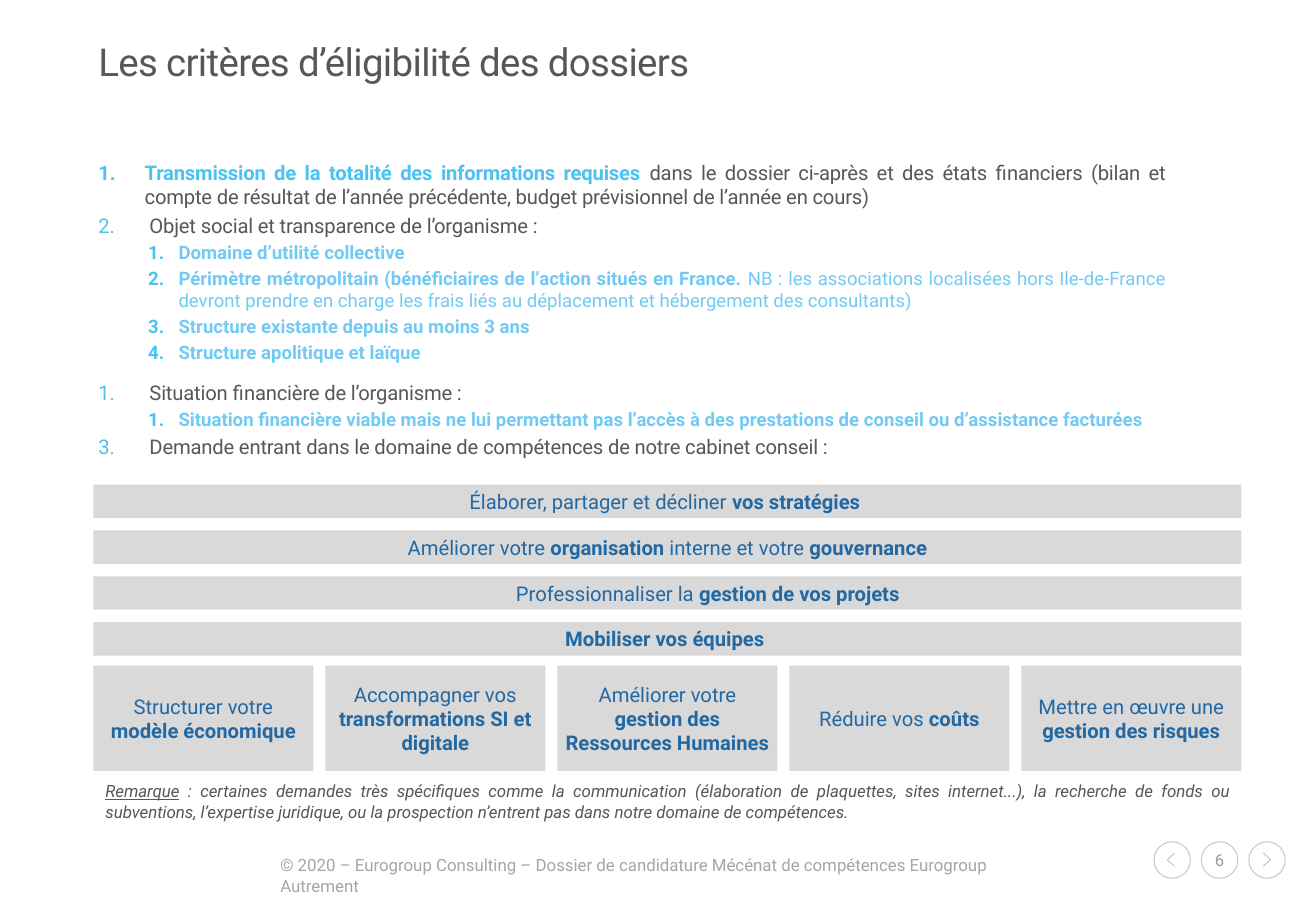
"""Builds the slide on the eligibility criteria for applications."""
from lxml.etree import SubElement
from pptx import Presentation
from pptx.dml.color import RGBColor
from pptx.enum.shapes import MSO_SHAPE
from pptx.enum.text import MSO_ANCHOR, PP_ALIGN
from pptx.oxml.ns import qn
from pptx.util import Pt

GREY, BLUE, SKY, NAVY = "57565A", "4CC2F1", "71CAF3", "2268A3"
PANEL, OUTLINE, FOOTER, NUMBER = "D9D9D9", "BFBFBF", "A6A6A6", "9A9A9B"


def paint(fill, colour):
    fill.solid()
    fill.fore_color.rgb = RGBColor.from_string(colour)


def write(paragraph, text, size, colour, spacing=0, **formats):
    run = paragraph.add_run()
    run.text = text
    for name, value in {"name": "Roboto", "size": Pt(size), **formats}.items():
        setattr(run.font, name, value)
    paint(run.font.fill, colour)
    if spacing:
        run.font._element.set("spc", str(spacing))


presentation = Presentation()
presentation.slide_width, presentation.slide_height = Pt(780), Pt(540)
slide = presentation.slides.add_slide(presentation.slide_layouts[6])
shapes = slide.shapes

text_boxes = {
    "footer": (159.1, 503.3, 465.8, 19.4, 7.2, 3.6, MSO_ANCHOR.TOP),
    "title": (58.3, 25.2, 663, 26.6, 0, 0, MSO_ANCHOR.MIDDLE),
    "criteria": (58.3, 95, 632.9, 200, 0, 0, MSO_ANCHOR.TOP),
    "remark": (55.4, 459.4, 680.4, 34.6, 7.2, 3.6, MSO_ANCHOR.TOP),
}
frames = {}
for name, (left, top, width, height, side, edge, anchor) in text_boxes.items():
    frame = shapes.add_textbox(Pt(left), Pt(top), Pt(width), Pt(height)).text_frame
    settings = {
        "word_wrap": True, "vertical_anchor": anchor,
        "margin_left": Pt(side), "margin_right": Pt(side),
        "margin_top": Pt(edge), "margin_bottom": Pt(edge),
    }
    for key, value in settings.items():
        setattr(frame, key, value)
    frames[name] = frame

write(frames["footer"].paragraphs[0],
      "© 2020 – Eurogroup Consulting – Dossier de candidature Mécénat de compétences Eurogroup Autrement",
      10, FOOTER)

title = frames["title"].paragraphs[0]
title.line_spacing = 0.86
write(title, "Les critères d’éligibilité des dossiers", 22.8, GREY, -40)

remark = frames["remark"].paragraphs[0]
remark.alignment = PP_ALIGN.JUSTIFY
write(remark, "Remarque", 10, GREY, italic=True, underline=True)
write(remark, " : certaines demandes très spécifiques comme la communication (élaboration de plaquettes, "
      "sites internet...), la recherche de fonds ou subventions, l’expertise juridique, ou la prospection "
      "n’entrent pas dans notre domaine de compétences.", 10, GREY, italic=True)

criteria = [
    (0, 0, [("Transmission de la totalité des informations requises ", BLUE, True),
            ("dans le dossier ci-après et des états financiers (bilan et compte de résultat de l’année "
             "précédente, budget prévisionnel de l’année en cours)", GREY, False)]),
    (0, 2.4, [(" Objet social et transparence de l’organisme : ", GREY, False)]),
    (2, 2.2, [("Domaine d’utilité collective", SKY, True)]),
    (2, 2.2, [("Périmètre métropolitain (bénéficiaires de l’action situés en France. ", SKY, True),
              ("NB : les associations localisées hors Ile-de-France devront prendre en charge les frais "
               "liés au déplacement et hébergement des consultants)", SKY, False)]),
    (2, 2.2, [("Structure existante depuis au moins 3 ans", SKY, True)]),
    (2, 2.2, [("Structure apolitique et laïque", SKY, True)]),
    (1, 10, [(" Situation financière de l’organisme : ", GREY, False)]),
    (2, 2.2, [("Situation financière viable mais ne lui permettant pas l’accès à des prestations de conseil "
               "ou d’assistance facturées ", SKY, True)]),
    (0, 2.4, [(" Demande entrant dans le domaine de compétences de notre cabinet conseil : ", GREY, False)]),
]
for index, (level, space, runs) in enumerate(criteria):
    frame = frames["criteria"]
    paragraph = frame.add_paragraph() if index else frame.paragraphs[0]
    nested = level == 2
    properties = paragraph._p.get_or_add_pPr()
    properties.set("marL", str(Pt(47.5 if nested else 27.4)))
    properties.set("indent", str(Pt(-18 if nested else -27.4)))
    bullet_colour = SubElement(properties, qn("a:buClr"))
    SubElement(bullet_colour, qn("a:srgbClr")).set("val", BLUE)
    SubElement(properties, qn("a:buFont")).set("typeface", "Roboto")
    SubElement(properties, qn("a:buAutoNum")).set("type", "arabicPeriod")
    formats = {"level": level, "alignment": PP_ALIGN.JUSTIFY, "space_before": Pt(space)}
    for key, value in formats.items():
        setattr(paragraph, key, value)
    for text, colour, bold in runs:
        write(paragraph, text, 11 if nested else 12, colour, 0 if nested else -10, bold=bold)

bars = [
    [("Élaborer, partager et décliner ", False), ("vos stratégies ", True)],
    [("Améliorer votre ", False), ("organisation", True),
     (" interne et votre ", False), ("gouvernance", True)],
    [("Professionnaliser la ", False), ("gestion de vos projets", True)],
    [("Mobiliser vos équipes ", True)],
]
tiles = [
    [("Structurer votre ", False), ("modèle économique", True)],
    [("Accompagner vos ", False), ("transformations SI et digitale", True)],
    [("Améliorer votre ", False), ("gestion des Ressources Humaines", True)],
    [("Réduire vos ", False), ("coûts", True)],
    [("Mettre en œuvre une ", False), ("gestion des risques", True)],
]
panels = [(55.4, 287.2 + 27.2 * row, 680.4, 19.8, runs) for row, runs in enumerate(bars)]
panels += [(55.4 + 137.5 * column, 394.6, 130.4, 62.4, runs) for column, runs in enumerate(tiles)]
for left, top, width, height, runs in panels:
    panel = shapes.add_shape(MSO_SHAPE.RECTANGLE, Pt(left), Pt(top), Pt(width), Pt(height))
    panel.shadow.inherit = False
    paint(panel.fill, PANEL)
    panel.line.fill.background()
    frame = panel.text_frame
    frame.word_wrap = True
    frame.vertical_anchor = MSO_ANCHOR.MIDDLE
    for side in ("left", "right", "top", "bottom"):
        setattr(frame, f"margin_{side}", Pt(2.9))
    paragraph = frame.paragraphs[0]
    paragraph.alignment = PP_ALIGN.CENTER
    if runs is bars[2]:
        paragraph._p.get_or_add_pPr().set("marL", str(Pt(48)))
    for text, bold in runs:
        write(paragraph, text, 12, NAVY, bold=bold)

buttons = []
for column in range(3):
    button = shapes.add_shape(MSO_SHAPE.OVAL, Pt(684 + 28.1 * column), Pt(499), Pt(21.6), Pt(21.6))
    buttons.append(button)
for base, tip in ((696.2, 691.9), (748.8, 753.1)):
    builder = shapes.build_freeform(Pt(base), Pt(513.6))
    builder.add_line_segments([(Pt(tip), Pt(509.6)), (Pt(base), Pt(505.6))], close=False)
    buttons.append(builder.convert_to_shape())
for button in buttons:
    button.shadow.inherit = False
    button.fill.background()
    paint(button.line.fill, OUTLINE)
    button.line.width = Pt(0.5)

page_frame = buttons[1].text_frame
page_frame.word_wrap = False
page_frame.vertical_anchor = MSO_ANCHOR.MIDDLE
page_frame.paragraphs[0].alignment = PP_ALIGN.CENTER
write(page_frame.paragraphs[0], "6", 9.8, NUMBER)

presentation.save("out.pptx")
